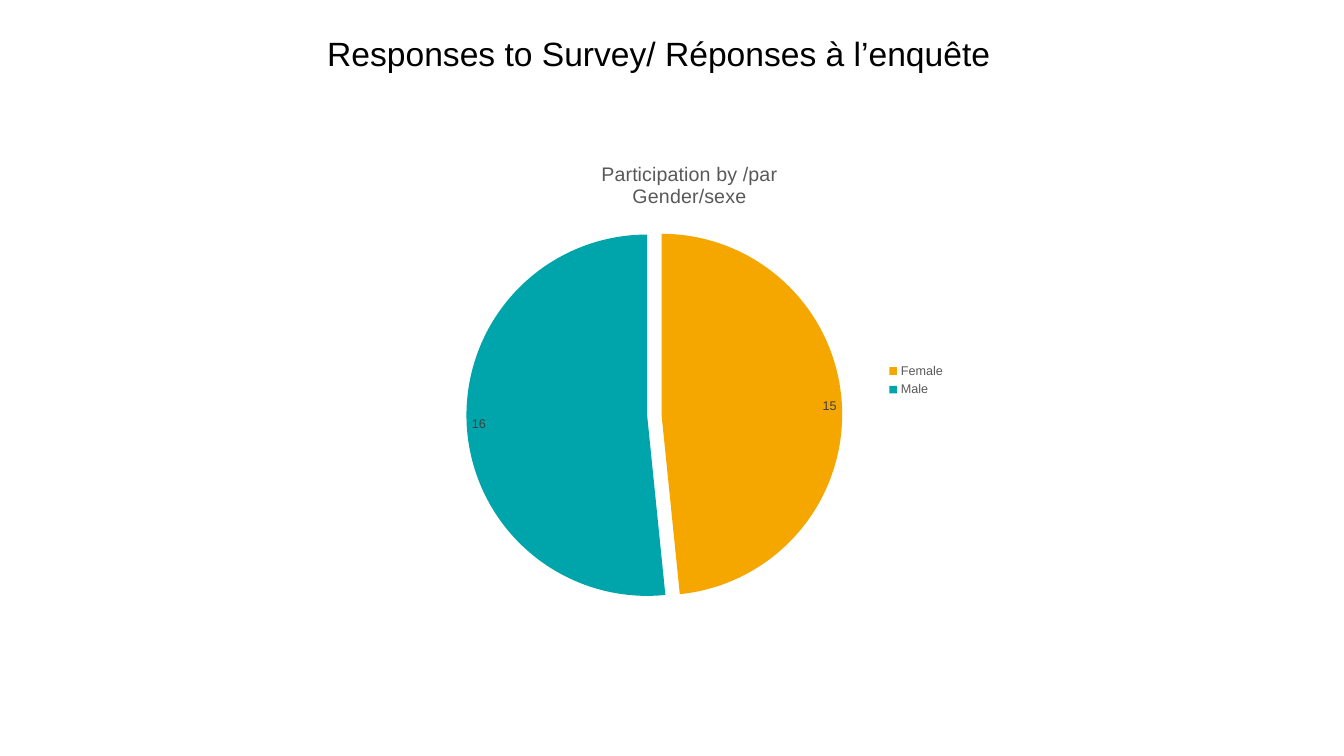
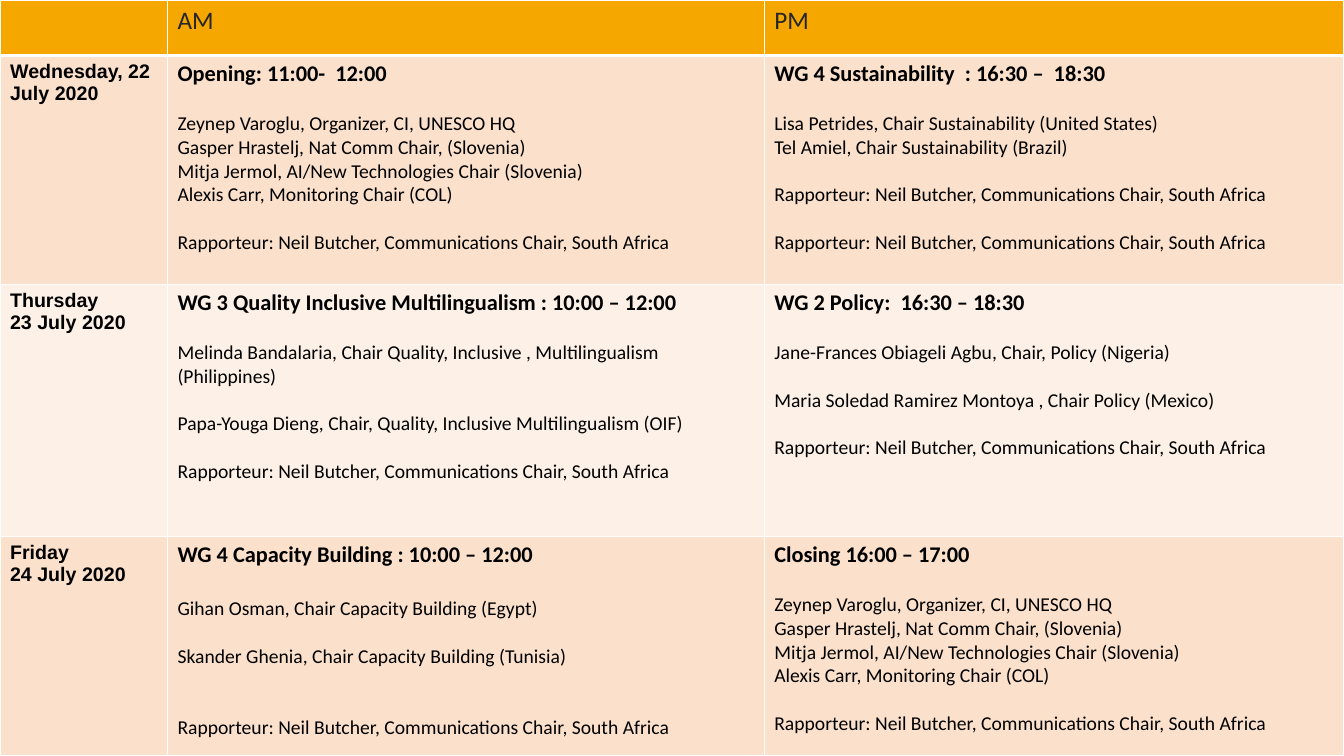
from lxml import etree
from pptx import Presentation
from pptx import util as u
from pptx.chart.data import CategoryChartData
from pptx.dml.color import RGBColor
from pptx.enum import chart as ch, text
from pptx.oxml import ns

ORANGE, TEAL, WHITE, BLACK = "F5A700", "00A5AB", "FFFFFF", "000000"
INK, GREY, DARK = "262626", "595959", "404040"
PEACH, CREAM = "FBE1CC", "FDF1E7"
SANS, BODY = "Arial", "Calibri"
GAP = 17


def rgb(code):
    return RGBColor.from_string(code)


def style(font, size, color=BLACK, name=SANS, bold=False):
    font.size, font.name, font.bold = u.Pt(size), name, bold
    font.color.rgb = rgb(color)


class Deck:
    def __init__(self):
        self.prs = Presentation()
        self.prs.slide_width, self.prs.slide_height = u.Cm(33.87), u.Cm(19.05)
        self.slide = None

    def page(self):
        self.slide = self.prs.slides.add_slide(self.prs.slide_layouts[6])

    def title(self, words):
        box = self.slide.shapes.add_textbox(u.Cm(2), u.Cm(0.56), u.Cm(29.2), u.Cm(1.68))
        frame = box.text_frame
        frame.word_wrap = True
        frame.vertical_anchor = text.MSO_ANCHOR.MIDDLE
        para = frame.paragraphs[0]
        para.text = words
        para.alignment = text.PP_ALIGN.CENTER
        para.line_spacing = 0.9
        style(para.font, 24)

    def pie(self, box, heading, names, values, colors):
        data = CategoryChartData()
        data.categories = names
        data.add_series("Series 1", values)
        area = [u.Cm(n) for n in box]
        chart = self.slide.shapes.add_chart(ch.XL_CHART_TYPE.PIE, *area, data).chart
        style(chart.font, 10)
        chart.has_title = True
        frame = chart.chart_title.text_frame
        frame.text = heading
        for para in frame.paragraphs:
            style(para.font, 14, GREY)
        chart.chart_title.include_in_layout = False
        chart.has_legend = True
        chart.legend.position = ch.XL_LEGEND_POSITION.RIGHT
        chart.legend.include_in_layout = False
        style(chart.legend.font, 9, GREY)
        plot = chart.plots[0]
        plot.vary_by_categories = True
        series = plot.series[0]
        for i, color in enumerate(colors):
            fill = series.points[i].format.fill
            fill.solid()
            fill.fore_color.rgb = rgb(color)
        burst = etree.Element(ns.qn("c:explosion"), val="4")
        series._element.find(ns.qn("c:dPt")).addprevious(burst)
        labels = series.data_labels
        labels.show_value = True
        labels.position = ch.XL_LABEL_POSITION.BEST_FIT
        style(labels.font, 9, DARK)

    def grid(self, widths, heights):
        frame = self.slide.shapes.add_table(
            len(heights), len(widths), 0, 0, u.Cm(sum(widths)), u.Cm(sum(heights)))
        table = frame.table
        table.first_row = table.horz_banding = False
        for col, width in zip(table.columns, widths):
            col.width = u.Cm(width)
        for row, height in zip(table.rows, heights):
            row.height = u.Cm(height)
        return table

    def cell(self, cell, fill, paras, top=1, bottom=1):
        props = cell._tc.get_or_add_tcPr()
        for side, width in zip("LRTB", (1, 1, top, bottom)):
            line = etree.SubElement(props, ns.qn("a:ln" + side), w=str(u.Pt(width)))
            paint = etree.SubElement(line, ns.qn("a:solidFill"))
            etree.SubElement(paint, ns.qn("a:srgbClr"), val=WHITE)
        cell.fill.solid()
        cell.fill.fore_color.rgb = rgb(fill)
        frame = cell.text_frame
        for i, (words, gap, look) in enumerate(paras):
            para = frame.paragraphs[0] if i == 0 else frame.add_paragraph()
            para.text = words
            para.space_before = u.Pt(gap)
            style(para.font, **look)


HEAD = dict(size=18, color=INK, name=BODY)
DAY = dict(size=14, bold=True)
TOPIC = dict(size=16, name=BODY, bold=True)
NAME = dict(size=14, name=BODY)

NOTE = (GAP, "Rapporteur: Neil Butcher, Communications Chair, South Africa")
HOSTS = (GAP, "Zeynep Varoglu, Organizer, CI, UNESCO HQ",
         "Gasper Hrastelj, Nat Comm Chair, (Slovenia)",
         "Mitja Jermol, AI/New Technologies Chair (Slovenia)",
         "Alexis Carr, Monitoring Chair (COL)")

DAYS = [
    (PEACH, ["Wednesday, 22 July 2020"], [
        ("Opening: 11:00-  12:00", HOSTS, NOTE),
        ("WG 4 Sustainability\u00a0 : 16:30 –  18:30".replace("\u00a0", " "),
         (GAP, "Lisa Petrides, Chair Sustainability (United States)",
          "Tel Amiel, Chair Sustainability (Brazil)"), NOTE, NOTE)]),
    (CREAM, ["Thursday", "23 July 2020"], [
        ("WG 3 Quality Inclusive Multilingualism : 10:00 – 12:00",
         (GAP, "Melinda Bandalaria, Chair Quality, Inclusive , Multilingualism (Philippines)"),
         (GAP, "Papa-Youga Dieng, Chair, Quality, Inclusive Multilingualism (OIF)"), NOTE),
        ("WG 2 Policy:  16:30 – 18:30",
         (GAP, "Jane-Frances Obiageli Agbu, Chair, Policy (Nigeria)"),
         (GAP, "Maria Soledad Ramirez Montoya , Chair Policy (Mexico)"), NOTE)]),
    (PEACH, ["Friday", "24 July 2020"], [
        ("WG 4 Capacity Building : 10:00 – 12:00",
         (20, "Gihan Osman, Chair Capacity Building (Egypt)"),
         (GAP, "Skander Ghenia, Chair Capacity Building (Tunisia)"), (2 * GAP, NOTE[1])),
        ("Closing 16:00 – 17:00", HOSTS, NOTE)]),
]


def session(topic, *blocks):
    paras = [(topic, 0, TOPIC)]
    for gap, *lines in blocks:
        paras += [(line, 0 if i else gap, NAME) for i, line in enumerate(lines)]
    return paras


def survey(deck):
    deck.page()
    deck.title("Responses to Survey/ Réponses à l’enquête")
    deck.pie((10.67, 3.63, 13.41, 11.91), "Participation by /par\nGender/sexe",
             ["Female", "Male"], [15, 16], [ORANGE, TEAL])


def agenda(deck):
    deck.page()
    table = deck.grid((4.22, 15.04, 14.61), (1.4, 5.77, 6.35, 5.53))
    for col, words in enumerate(("", "AM", "PM")):
        deck.cell(table.cell(0, col), ORANGE, [(words, 0, HEAD)], bottom=3)
    for row, (fill, day, slots) in enumerate(DAYS, 1):
        cells = [[(line, 0, DAY) for line in day]] + [session(*slot) for slot in slots]
        for col, paras in enumerate(cells):
            deck.cell(table.cell(row, col), fill, paras, top=3 if row == 1 else 1)


def main():
    deck = Deck()
    survey(deck)
    agenda(deck)
    deck.prs.save("out.pptx")


if __name__ == "__main__":
    main()
